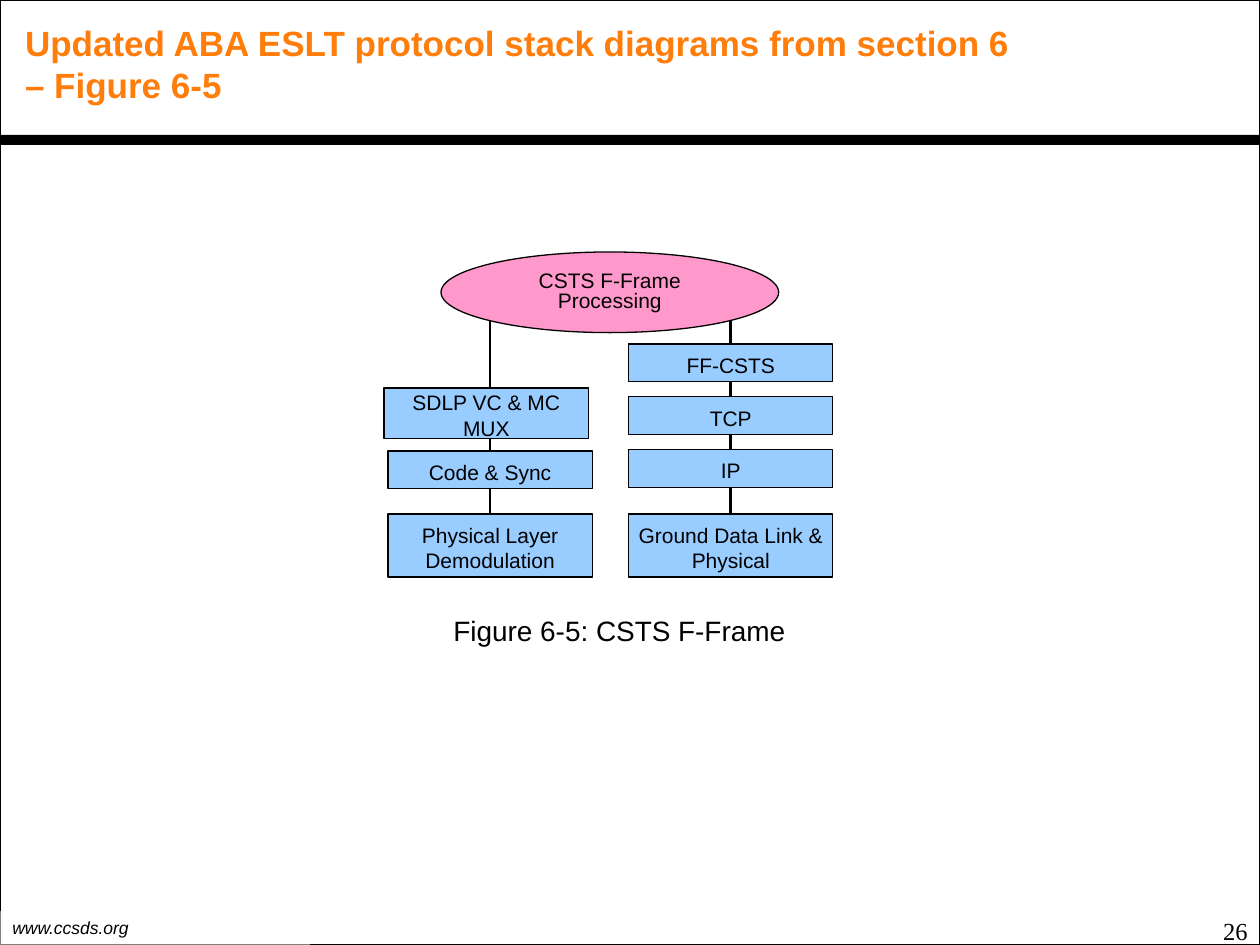
import pptx
import pptx.dml.color
import pptx.enum.shapes
import pptx.enum.text
import pptx.oxml.ns
import pptx.util
from lxml import etree

Inches = pptx.util.Inches
Pt = pptx.util.Pt
SHAPES = pptx.enum.shapes.MSO_SHAPE
ALIGN = pptx.enum.text.PP_ALIGN
ANCHOR = pptx.enum.text.MSO_ANCHOR
COLORS = {
    name: pptx.dml.color.RGBColor.from_string(value)
    for name, value in {
        "black": "000000",
        "white": "FFFFFF",
        "title": "FF7D0A",
        "layer": "99CCFF",
        "process": "FF99CC",
    }.items()
}


def add_box(kind, box, fill=None, line_width=None):
    """Add a preset shape, or a text box when kind is None."""
    position = [Inches(value) for value in box]
    if kind is None:
        return slide.shapes.add_textbox(*position)
    shape = slide.shapes.add_shape(kind, *position)
    shape.shadow.inherit = False
    if fill:
        shape.fill.solid()
        shape.fill.fore_color.rgb = COLORS[fill]
    else:
        shape.fill.background()
    if line_width:
        shape.line.color.rgb = COLORS["black"]
        shape.line.width = Pt(line_width)
    else:
        shape.line.fill.background()
    return shape


def write(shape, lines, size, align=ALIGN.LEFT, anchor=ANCHOR.TOP, insets=(0.1, 0.05, 0.1, 0.05),
          color="black", font="Arial", bold=False, italic=False, spacing=None, wrap=True):
    """Fill a shape with one paragraph per line."""
    frame = shape.text_frame
    frame.word_wrap = wrap
    frame.vertical_anchor = anchor
    frame.margin_left, frame.margin_top, frame.margin_right, frame.margin_bottom = map(Inches, insets)
    for index, line in enumerate(lines):
        paragraph = frame.add_paragraph() if index else frame.paragraphs[0]
        paragraph.alignment = align
        if spacing:
            paragraph.line_spacing = spacing
        run = paragraph.add_run()
        run.text = line
        run.font.name = font
        run.font.size = Pt(size)
        run.font.bold = bold
        run.font.italic = italic
        run.font.color.rgb = COLORS[color]


presentation = pptx.Presentation()
presentation.slide_width = Inches(10)
presentation.slide_height = Inches(7.5)
slide = presentation.slides.add_slide(presentation.slide_layouts[6])

# Page frame, footer, header rule and title
add_box(SHAPES.RECTANGLE, (0, 0, 10, 7.5), line_width=1)
footer = add_box(SHAPES.RECTANGLE, (0, 7.23, 2.46, 0.27), "white")
fill_color = footer.fill._xPr.find(".//" + pptx.oxml.ns.qn("a:srgbClr"))
etree.SubElement(fill_color, pptx.oxml.ns.qn("a:alpha"), val="50000")
write(footer, ["www.ccsds.org"], 10, anchor=ANCHOR.MIDDLE, italic=True)
add_box(SHAPES.RECTANGLE, (0, 1.07, 10, 0.08), "black")
page_number = add_box(None, (7.67, 7.22, 2.33, 0.47))
write(page_number, ["26"], 14, ALIGN.RIGHT, font="Times New Roman")
title = add_box(None, (0.1, 0.17, 8.18, 0.67))
write(title, ["Updated ABA ESLT protocol stack diagrams from section 6 – Figure 6-5"], 20,
      anchor=ANCHOR.MIDDLE, color="title", bold=True)

process = add_box(SHAPES.OVAL, (3.5, 2, 2.68, 0.64), "process", 0.75)
write(process, ["CSTS F-Frame", "Processing"], 12, ALIGN.CENTER, ANCHOR.MIDDLE, (0, 0, 0, 0), spacing=0.8)

# Each stack is listed bottom up, so its line lies behind the upper layers
LAYER_WIDTH = 1.62
stacks = [
    [("Physical Layer Demodulation", 3.08, 4.08, 0.5, 0.75),
     ("Code & Sync", 3.08, 3.58, 0.3, 0.75),
     ("SDLP VC & MC MUX", 3.05, 3.08, 0.4, 1)],
    [("Ground Data Link & Physical", 4.99, 4.08, 0.5, 0.75),
     ("IP", 4.99, 3.57, 0.3, 0.75),
     ("TCP", 4.99, 3.15, 0.3, 0.75),
     ("FF-CSTS", 4.99, 2.73, 0.3, 0.75)],
]
for stack in stacks:
    for index, (label, left, top, height, line_width) in enumerate(stack):
        layer = add_box(SHAPES.RECTANGLE, (left, top, LAYER_WIDTH, height), "layer", line_width)
        write(layer, [label], 12, ALIGN.CENTER, ANCHOR.MIDDLE, (0.04, 0.03, 0.04, 0))
        if index == 0:
            center = Inches(left + LAYER_WIDTH / 2)
            link = slide.shapes.add_connector(
                pptx.enum.shapes.MSO_CONNECTOR.STRAIGHT, center, Inches(2.55), center, Inches(top))
            link.end_connect(layer, 0)
            link.line.color.rgb = COLORS["black"]
            link.line.width = Pt(1.5)
            etree.SubElement(link._element.spPr, pptx.oxml.ns.qn("a:effectLst"))

caption = add_box(None, (3.5, 4.82, 2.88, 0.37))
write(caption, ["Figure 6-5: CSTS F-Frame"], 16, wrap=False)

presentation.save("out.pptx")
